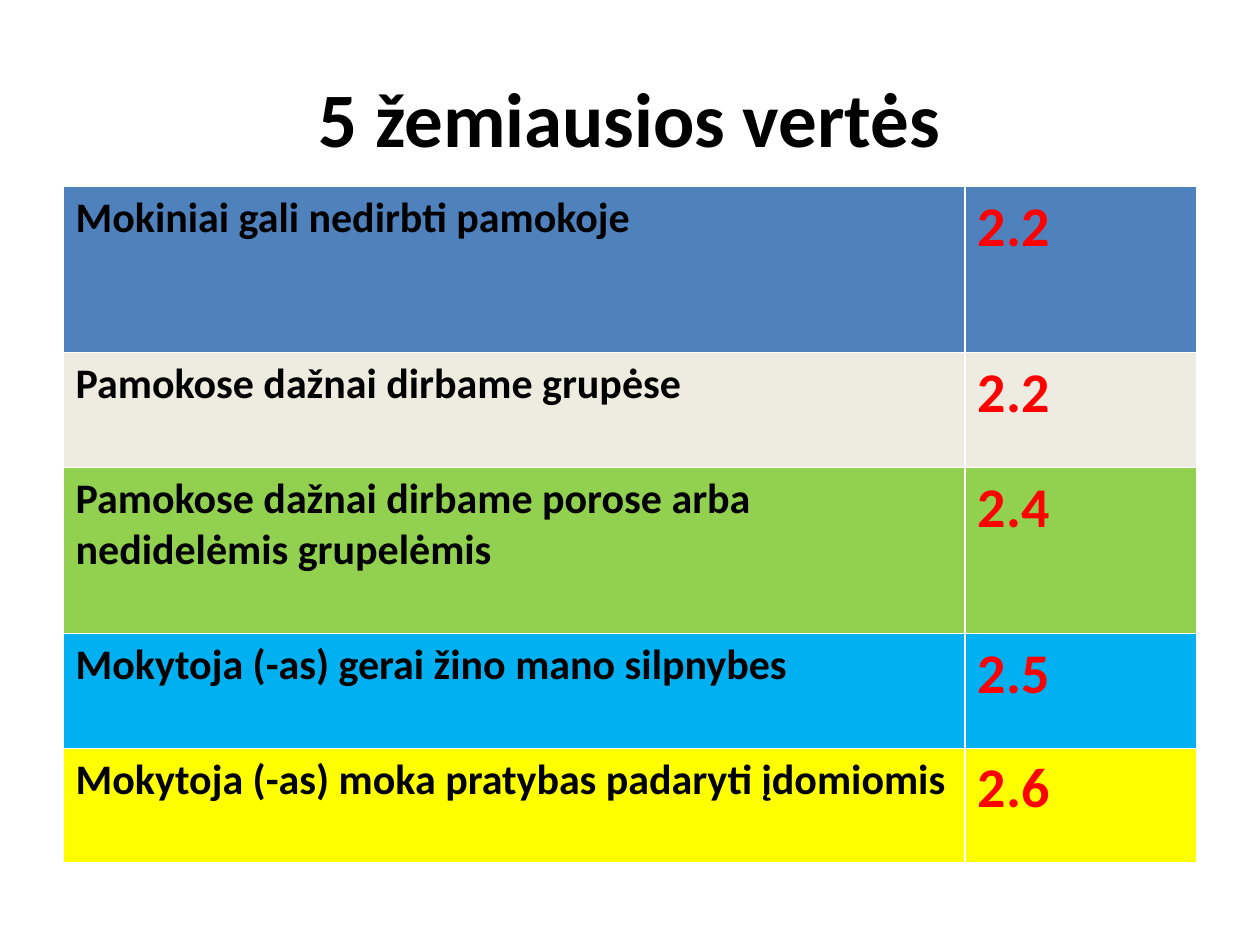
"""Build a slide that ranks the five lowest survey values in a table."""
from dataclasses import dataclass

from pptx import Presentation
from pptx.dml.color import RGBColor
from pptx.enum.text import MSO_ANCHOR, PP_ALIGN
from pptx.slide import Slide
from pptx.table import _Cell
from pptx.text.text import TextFrame
from pptx.util import Inches, Pt

COLORS = {
    "text": "000000",
    "score": "FF0000",
    "blue": "4F81BD",
    "cream": "EEECE1",
    "green": "92D050",
    "sky": "00B0F0",
    "yellow": "FFFF00",
}
FONT = {"name": "Calibri", "bold": True}
PLACE = {"left": 0.5, "top": 0.3, "width": 9, "height": 1.25}
WIDTHS = (7.16, 1.84)
TOP = 1.48
SHORT, TALL = 0.91, 1.32


@dataclass(frozen=True)
class Entry:
    """One ranked statement with its score."""
    label: str
    score: str
    fill: str
    height: float


ENTRIES = [
    Entry("Mokiniai gali nedirbti pamokoje", "2.2", "blue", TALL),
    Entry("Pamokose dažnai dirbame grupėse", "2.2", "cream", SHORT),
    Entry("Pamokose dažnai dirbame porose arba nedidelėmis grupelėmis",
          "2.4", "green", TALL),
    Entry("Mokytoja (-as) gerai žino mano silpnybes", "2.5", "sky", SHORT),
    Entry("Mokytoja (-as) moka pratybas padaryti įdomiomis",
          "2.6", "yellow", SHORT),
]


def write(frame: TextFrame, text: str, size: int, color: str) -> None:
    """Put one formatted run of text in a frame."""
    run = frame.paragraphs[0].add_run()
    run.text = text
    for key, value in {**FONT, "size": Pt(size)}.items():
        setattr(run.font, key, value)
    run.font.color.rgb = RGBColor.from_string(COLORS[color])


def paint(cell: _Cell, fill: str) -> None:
    """Fill a cell with a named colour."""
    cell.fill.solid()
    cell.fill.fore_color.rgb = RGBColor.from_string(COLORS[fill])


def add_title(slide: Slide, text: str) -> None:
    """Place and write the slide title."""
    title = slide.shapes.title
    for key, value in PLACE.items():
        setattr(title, key, Inches(value))
    frame = title.text_frame
    frame.vertical_anchor = MSO_ANCHOR.MIDDLE
    frame.paragraphs[0].alignment = PP_ALIGN.CENTER
    write(frame, text, 44, "text")


def add_ranks(slide: Slide, entries: list[Entry]) -> None:
    """Draw the table with one row per entry."""
    height = sum(entry.height for entry in entries)
    table = slide.shapes.add_table(
        len(entries), len(WIDTHS), Inches(PLACE["left"]), Inches(TOP),
        Inches(sum(WIDTHS)), Inches(height)).table
    for column, width in zip(table.columns, WIDTHS):
        column.width = Inches(width)
    for row, entry in zip(table.rows, entries):
        row.height = Inches(entry.height)
        label, score = row.cells
        write(label.text_frame, entry.label, 24, "text")
        write(score.text_frame, entry.score, 32, "score")
        for cell in (label, score):
            paint(cell, entry.fill)


def main() -> None:
    """Build and save the presentation."""
    deck = Presentation()
    deck.slide_width, deck.slide_height = Inches(10), Inches(7.5)
    slide = deck.slides.add_slide(deck.slide_layouts.get_by_name("Title Only"))
    add_title(slide, "5 žemiausios vertės")
    add_ranks(slide, ENTRIES)
    deck.save("out.pptx")


if __name__ == "__main__":
    main()
